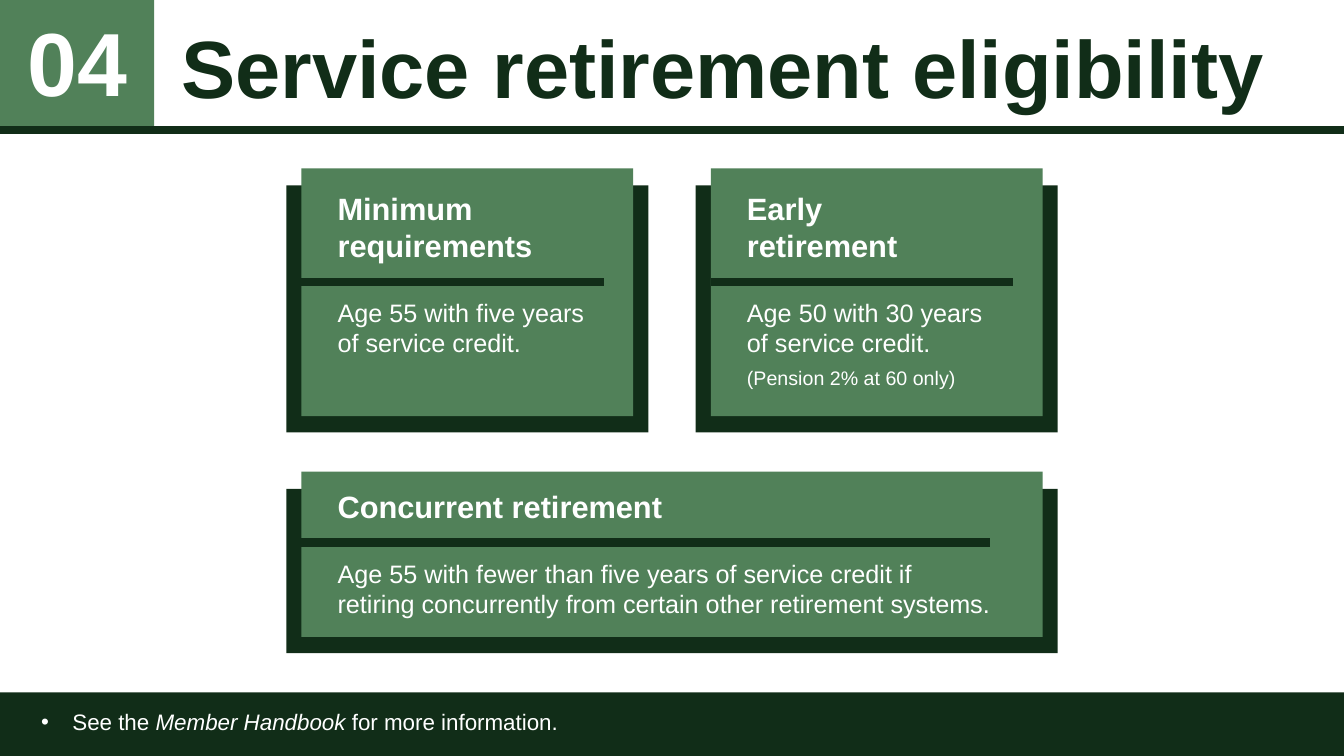
import pptx
import pptx.dml.color
import pptx.enum.shapes
import pptx.enum.text
import pptx.oxml.xmlchemy
import pptx.util
from dataclasses import dataclass

Inches = pptx.util.Inches
Pt = pptx.util.Pt
Align = pptx.enum.text.PP_ALIGN
Anchor = pptx.enum.text.MSO_ANCHOR
new_element = pptx.oxml.xmlchemy.OxmlElement


@dataclass(frozen=True)
class Theme:
    font: str = "Arial"
    dark: str = "112D18"
    green: str = "518159"
    white: str = "FFFFFF"
    number: int = 64
    title: int = 58
    heading: int = 22
    body: int = 18
    footer: int = 16
    remark: int = 14
    rule: int = 6


THEME = Theme()


def rgb(color):
    return pptx.dml.color.RGBColor.from_string(color)


def add_block(slide, left, top, width, height, color):
    block = slide.shapes.add_shape(
        pptx.enum.shapes.MSO_SHAPE.RECTANGLE,
        Inches(left), Inches(top), Inches(width), Inches(height))
    block.shadow.inherit = False
    block.fill.solid()
    block.fill.fore_color.rgb = rgb(color)
    block.line.fill.background()


def add_rule(slide, left, top, length):
    rule = slide.shapes.add_connector(
        pptx.enum.shapes.MSO_CONNECTOR.STRAIGHT,
        Inches(left), Inches(top), Inches(left + length), Inches(top))
    rule.line.color.rgb = rgb(THEME.dark)
    rule.line.width = Pt(THEME.rule)
    rule._element.spPr.append(new_element("a:effectLst"))


def add_text(slide, left, top, width, height, anchor=Anchor.TOP):
    frame = slide.shapes.add_textbox(
        Inches(left), Inches(top), Inches(width), Inches(height)).text_frame
    frame.word_wrap = True
    frame.vertical_anchor = anchor
    return frame


def add_run(paragraph, text, size, color=THEME.white, bold=False, italic=False):
    run = paragraph.add_run()
    run.text = text
    run.font.name = THEME.font
    run.font.size = Pt(size)
    run.font.color.rgb = rgb(color)
    run.font.bold = bold
    run.font.italic = italic


def add_bullet(paragraph, indent):
    properties = paragraph._p.get_or_add_pPr()
    properties.set("marL", str(Inches(indent)))
    properties.set("indent", str(-Inches(indent)))
    face = new_element("a:buFont")
    face.set("typeface", THEME.font)
    bullet = new_element("a:buChar")
    bullet.set("char", "•")
    properties.extend([face, bullet])


def add_header(slide, left, top, width, height, number, title):
    number_width = 1.53
    add_block(slide, left, top, number_width, height, THEME.green)
    number_line = add_text(slide, left + 0.17, top + 0.19, 1.2, 0.96,
                           Anchor.MIDDLE).paragraphs[0]
    number_line.alignment = Align.CENTER
    number_line.line_spacing = 0.9
    add_run(number_line, number, THEME.number, bold=True)
    add_rule(slide, left, top + height, width)
    title_offset = number_width + 0.17
    title_line = add_text(slide, left + title_offset, top + 0.01,
                          width - title_offset - 0.17, height,
                          Anchor.MIDDLE).paragraphs[0]
    add_run(title_line, title, THEME.title, THEME.dark, bold=True)


def add_card(slide, left, top, width, height, text_top, text_width,
             rule_top, rule_length, heading_lines, details):
    """Places a raised card on its dark backing; details are (text, size) pairs."""
    edge = 0.15
    add_block(slide, left, top, width, height, THEME.dark)
    add_block(slide, left + edge, top - 0.17, width - 2 * edge, height + 0.01, THEME.green)

    # Heading, one run for each line
    frame = add_text(slide, left + 0.41, top + text_top, text_width, height - 0.2)
    heading = frame.paragraphs[0]
    heading.space_after = Pt(24)
    for index, line in enumerate(heading_lines):
        if index:
            heading.add_line_break()
        add_run(heading, line, THEME.heading, bold=True)

    # Details
    for text, size in details:
        detail = frame.add_paragraph()
        detail.space_after = Pt(6)
        add_run(detail, text, size)
    add_rule(slide, left + edge, top + rule_top, rule_length)


def add_footer(slide, left, top, width, height):
    add_block(slide, left, top, width, height, THEME.dark)
    note = add_text(slide, left + 0.31, top + 0.11, width - 0.48, 0.37).paragraphs[0]
    add_bullet(note, 0.31)
    add_run(note, "See the ", THEME.footer)
    add_run(note, "Member Handbook", THEME.footer, italic=True)
    add_run(note, " for more information.", THEME.footer)


def main():
    deck = pptx.Presentation()
    width, height = 13.33, 7.5
    deck.slide_width, deck.slide_height = Inches(width), Inches(height)
    slide = deck.slides.add_slide(deck.slide_layouts[6])

    add_header(slide, 0, 0, width, 1.29, "04", "Service retirement eligibility")

    # Two cards side by side above one wide card
    card_left, card_width, card_gap = 2.84, 3.59, 0.47
    upper = dict(top=1.84, width=card_width, height=2.45, text_top=-0.01,
                 text_width=2.75, rule_top=0.96, rule_length=3)
    add_card(slide, card_left, **upper,
             heading_lines=["Minimum requirements"],
             details=[("Age 55 with five years of service credit.", THEME.body)])
    add_card(slide, card_left + card_width + card_gap, **upper,
             heading_lines=["Early", "retirement"],
             details=[("Age 50 with 30 years of service credit.", THEME.body),
                      ("(Pension 2% at 60 only)", THEME.remark)])
    add_card(slide, card_left, 4.85, 2 * card_width + card_gap, 1.63, text_top=-0.06,
             text_width=6.72, rule_top=0.53, rule_length=6.83,
             heading_lines=["Concurrent retirement"],
             details=[("Age 55 with fewer than five years of service credit if retiring "
                       "concurrently from certain other retirement systems.", THEME.body)])

    add_footer(slide, 0, 6.87, width, height - 6.87)
    deck.save("out.pptx")


if __name__ == "__main__":
    main()
